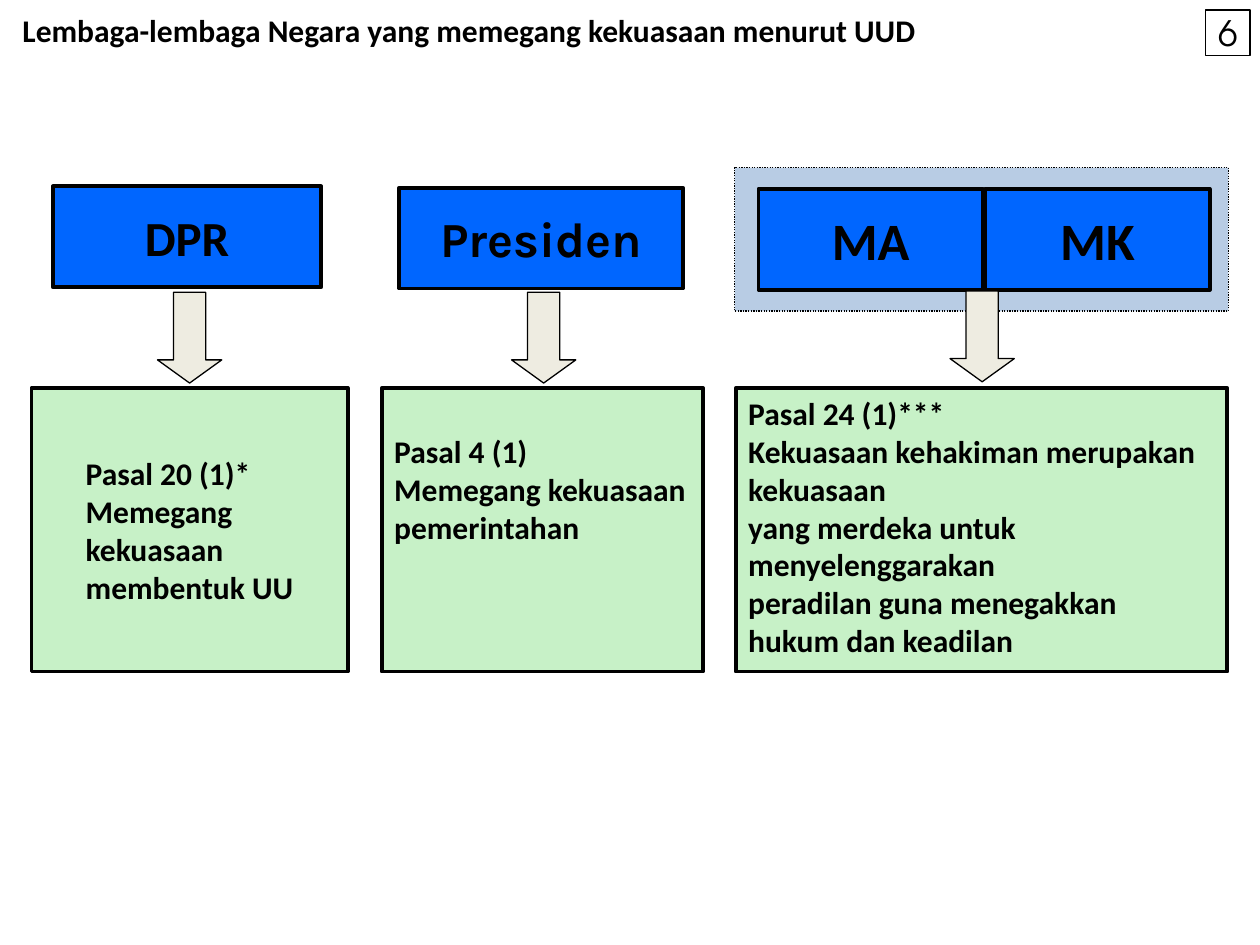
import dataclasses

import lxml.etree
import pptx
import pptx.dml.color
import pptx.enum.dml
import pptx.enum.shapes
import pptx.enum.text
import pptx.oxml.ns
import pptx.util

Inches = pptx.util.Inches
SHAPE = pptx.enum.shapes.MSO_SHAPE
ALIGN = pptx.enum.text.PP_ALIGN
ANCHOR = pptx.enum.text.MSO_ANCHOR


@dataclasses.dataclass(frozen=True)
class Theme:
    ink: str = "000000"
    organ: str = "0066FF"
    duty: str = "33CC33"
    court: str = "4F81BD"
    arrow: str = "EEECE1"
    font: str = "Calibri"
    presiden_font: str = "Karla"
    number_font: str = "TeX Gyre Adventor"
    body: int = 18
    number: int = 20
    organ_size: int = 28
    court_size: int = 30
    thin: float = 0.75
    thick: float = 2.25


THEME = Theme()


def rgb(value):
    return pptx.dml.color.RGBColor.from_string(value)


def add_box(shapes, at, fill=None, alpha=None, line=THEME.thick, kind=SHAPE.RECTANGLE):
    sp = shapes.add_shape(kind, *map(Inches, at))
    sp.shadow.inherit = False
    if fill:
        sp.fill.solid()
        sp.fill.fore_color.rgb = rgb(fill)
    else:
        sp.fill.background()
    if alpha:
        color = sp._element.spPr.find(".//" + pptx.oxml.ns.qn("a:srgbClr"))
        lxml.etree.SubElement(color, pptx.oxml.ns.qn("a:alpha"), val=str(alpha * 1000))
    sp.line.color.rgb = rgb(THEME.ink)
    sp.line.width = pptx.util.Pt(line)
    return sp


def write(sp, lines, size=THEME.body, font=THEME.font, bold=True,
          align=ALIGN.LEFT, anchor=ANCHOR.TOP, left=0.1, top=0.05, right=0.1, bottom=0.05):
    tf = sp.text_frame
    tf.word_wrap = True
    tf.vertical_anchor = anchor
    tf.margin_left, tf.margin_right = Inches(left), Inches(right)
    tf.margin_top, tf.margin_bottom = Inches(top), Inches(bottom)
    for i, line in enumerate(lines):
        p = tf.add_paragraph() if i else tf.paragraphs[0]
        p.alignment = align
        r = p.add_run()
        r.text = line
        r.font.name = font
        r.font.size = pptx.util.Pt(size)
        r.font.bold = bold
        r.font.color.rgb = rgb(THEME.ink)


def add_title(s, text):
    sp = s.shapes.add_textbox(*map(Inches, (0.08, 0.04, 9.08, 0.36)))
    write(sp, [text])


def add_number(s, text):
    sp = add_box(s.shapes, (9.57, 0.08, 0.35, 0.36), line=THEME.thin)
    write(sp, [text], THEME.number, THEME.number_font, False, ALIGN.CENTER,
          ANCHOR.MIDDLE, left=0, top=0, right=0, bottom=0)


def add_organ(shapes, name, at, size=THEME.organ_size, font=THEME.font):
    sp = add_box(shapes, at, THEME.organ)
    write(sp, [name], size, font, align=ALIGN.CENTER, anchor=ANCHOR.MIDDLE)


def add_courts(s):
    group = s.shapes.add_group_shape()
    frame = add_box(group.shapes, (5.83, 1.33, 3.92, 1.14), THEME.court, 40, THEME.thin)
    frame.line.dash_style = pptx.enum.dml.MSO_LINE.ROUND_DOT
    for i, name in enumerate(("MA", "MK")):
        add_organ(group.shapes, name, (6.02 + 1.8 * i, 1.5, 1.78, 0.8), THEME.court_size)


def add_duty(s, x, width, lines, **layout):
    sp = add_box(s.shapes, (x, 3.08, width, 2.25), THEME.duty, 27)
    write(sp, lines, **layout)


def add_arrow(s, x, y=2.32):
    sp = add_box(s.shapes, (x, y, 0.51, 0.72), THEME.arrow,
                 line=THEME.thin, kind=SHAPE.DOWN_ARROW)
    sp.adjustments[0] = 0.5
    sp.adjustments[1] = 0.36


def main():
    prs = pptx.Presentation()
    prs.slide_width, prs.slide_height = Inches(10), Inches(7.5)
    s = prs.slides.add_slide(prs.slide_layouts[6])

    add_title(s, "Lembaga-lembaga Negara yang memegang kekuasaan menurut UUD")
    add_number(s, "6")

    add_organ(s.shapes, "DPR", (0.42, 1.48, 2.13, 0.8))
    add_organ(s.shapes, "Presiden", (3.17, 1.49, 2.25, 0.8), font=THEME.presiden_font)
    add_courts(s)

    add_duty(s, 0.25, 2.51, ["Pasal 20 (1)*", "Memegang kekuasaan membentuk UU"],
             anchor=ANCHOR.MIDDLE, left=0.43)
    add_duty(s, 3.03, 2.55, ["Pasal 4 (1)", "Memegang kekuasaan pemerintahan"], top=0.35)
    add_duty(s, 5.84, 3.9, ["Pasal 24 (1)***",
                            "Kekuasaan kehakiman merupakan kekuasaan",
                            "yang merdeka untuk menyelenggarakan",
                            "peradilan guna menegakkan",
                            "hukum dan keadilan"])

    add_arrow(s, 1.25)
    add_arrow(s, 4.06)
    add_arrow(s, 7.54, 2.31)

    prs.save("out.pptx")


if __name__ == "__main__":
    main()
